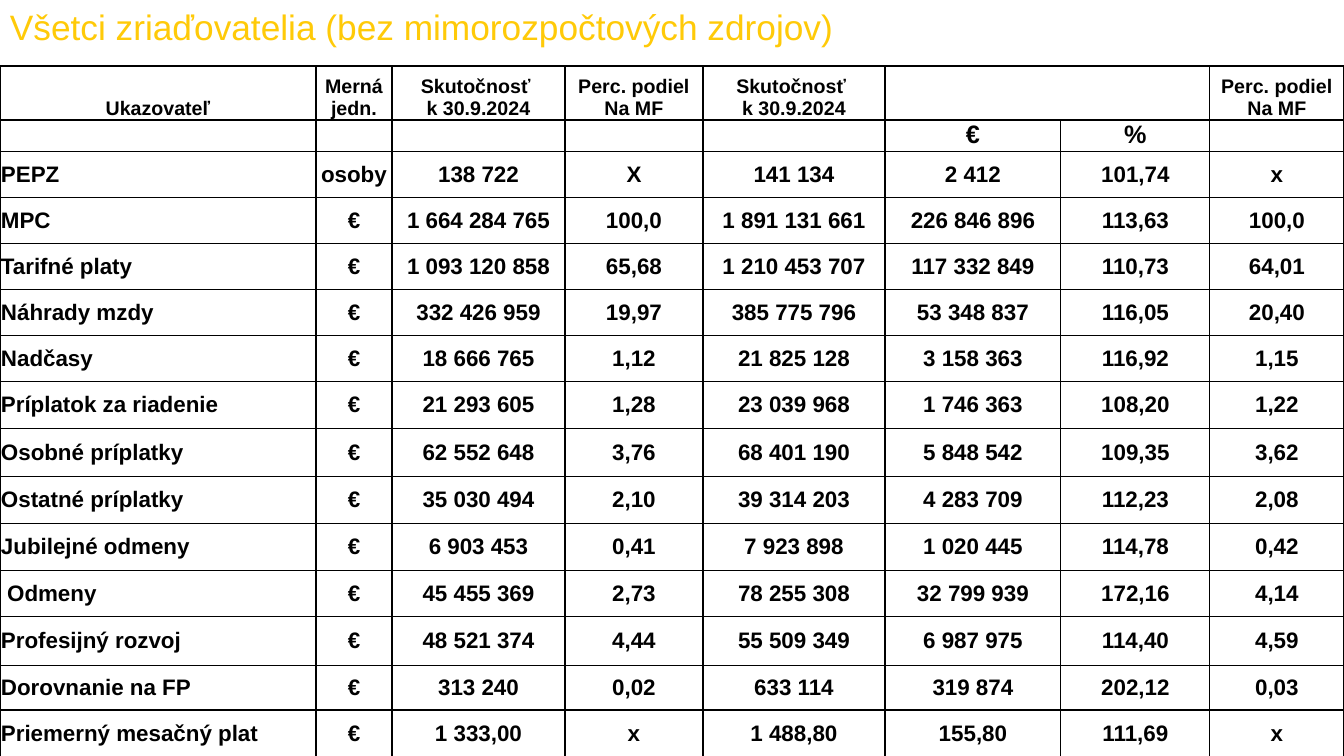
from lxml import etree
from pptx import Presentation
from pptx import util as u
from pptx.dml import color
from pptx.enum import text
from pptx.oxml import ns

PX = 9071.43
CENTER, LEFT = text.PP_ALIGN.CENTER, text.PP_ALIGN.LEFT
TOP, MIDDLE, BOTTOM = (text.MSO_ANCHOR.TOP, text.MSO_ANCHOR.MIDDLE,
                       text.MSO_ANCHOR.BOTTOM)

COLS = [316, 76, 173, 138, 182, 176, 149, 134]
ROWS = [54, 30, 46, 46, 46, 46, 46, 47, 48, 47, 47, 46, 49, 45, 47]
ACTUAL = "Skutočnosť \nk 30.9.2024"
SHARE = "Perc. podiel\nNa MF"
HEADER = ["Ukazovateľ", "Merná jedn.", ACTUAL, SHARE, ACTUAL, "", "", SHARE]
SUBHEADER = ["", "", "", "", "", "€", "%", ""]
DATA = [
    ["PEPZ", "osoby", "138 722", "X", "141 134", "2 412", "101,74", "x"],
    ["MPC", "€", "1 664 284 765", "100,0", "1 891 131 661", "226 846 896", "113,63", "100,0"],
    ["Tarifné platy", "€", "1 093 120 858", "65,68", "1 210 453 707", "117 332 849", "110,73", "64,01"],
    ["Náhrady mzdy", "€", "332 426 959", "19,97", "385 775 796", "53 348 837", "116,05", "20,40"],
    ["Nadčasy", "€", "18 666 765", "1,12", "21 825 128", "3 158 363", "116,92", "1,15"],
    ["Príplatok za riadenie", "€", "21 293 605", "1,28", "23 039 968", "1 746 363", "108,20", "1,22"],
    ["Osobné príplatky", "€", "62 552 648", "3,76", "68 401 190", "5 848 542", "109,35", "3,62"],
    ["Ostatné príplatky", "€", "35 030 494", "2,10", "39 314 203", "4 283 709", "112,23", "2,08"],
    ["Jubilejné odmeny", "€", "6 903 453", "0,41", "7 923 898", "1 020 445", "114,78", "0,42"],
    [" Odmeny", "€", "45 455 369", "2,73", "78 255 308", "32 799 939", "172,16", "4,14"],
    ["Profesijný rozvoj", "€", "48 521 374", "4,44", "55 509 349", "6 987 975", "114,40", "4,59"],
    ["Dorovnanie na FP", "€", "313 240", "0,02", "633 114", "319 874", "202,12", "0,03"],
    ["Priemerný mesačný plat", "€", "1 333,00", "x", "1 488,80", "155,80", "111,69", "x"],
]


def px(n):
    return u.Emu(round(n * PX))


def rgb(value):
    return color.RGBColor.from_string(value)


class Deck:
    font = "Arial"
    ink = "000000"
    paper = "FFFFFF"
    accent = "FFCA08"

    def __init__(self, width, height):
        self.prs = Presentation()
        self.prs.slide_width, self.prs.slide_height = px(width), px(height)
        self.s = self.prs.slides.add_slide(self.prs.slide_layouts[6])

    def add_text(self, tf, content, size, ink, bold=False, align=LEFT):
        tf.word_wrap = True
        for i, line in enumerate(content.split("\n")):
            p = tf.add_paragraph() if i else tf.paragraphs[0]
            p.alignment = align
            r = p.add_run()
            r.text = line
            r.font.name, r.font.size, r.font.bold = self.font, u.Pt(size), bold
            r.font.color.rgb = rgb(ink)

    def title(self, x, y, w, h, content, size):
        tf = self.s.shapes.add_textbox(px(x), px(y), px(w), px(h)).text_frame
        tf.vertical_anchor = MIDDLE
        self.add_text(tf, content, size, self.accent)

    def borders(self, cell):
        tc_pr = cell._tc.get_or_add_tcPr()
        for side in ("lnL", "lnR", "lnT", "lnB"):
            ln = etree.SubElement(tc_pr, ns.qn("a:" + side), w=str(u.Pt(1)))
            fill = etree.SubElement(ln, ns.qn("a:solidFill"))
            etree.SubElement(fill, ns.qn("a:srgbClr"), val=self.ink)

    def cell(self, cell, content, size, anchor, align):
        self.borders(cell)
        cell.fill.solid()
        cell.fill.fore_color.rgb = rgb(self.paper)
        cell.margin_left = cell.margin_right = cell.margin_top = px(1)
        cell.margin_bottom = 0
        cell.vertical_anchor = anchor
        if content:
            self.add_text(cell.text_frame, content, size, self.ink, True, align)

    def table(self, x, y, cols, rows, bands):
        tbl = self.s.shapes.add_table(len(rows), len(cols), px(x), px(y),
                                      px(sum(cols)), px(sum(rows))).table
        tbl.first_row = tbl.horz_banding = False
        for col, w in zip(tbl.columns, cols):
            col.width = px(w)
        for row, h in zip(tbl.rows, rows):
            row.height = px(h)
        lines = [(line, size, anchor, first)
                 for group, size, anchor, first in bands for line in group]
        for row, (line, size, anchor, first) in zip(tbl.rows, lines):
            for c, content in enumerate(line):
                align = CENTER if c else first
                self.cell(row.cells[c], content, size, anchor, align)
        return tbl


def main():
    deck = Deck(1344, 756)
    deck.title(0, 0, 948, 52,
               "Všetci zriaďovatelia (bez mimorozpočtových zdrojov)", 25.2)
    tbl = deck.table(0, 66, COLS, ROWS, [
        ([HEADER], 14, BOTTOM, CENTER),
        ([SUBHEADER], 18, TOP, CENTER),
        (DATA, 16, MIDDLE, LEFT),
    ])
    tbl.cell(0, 5).merge(tbl.cell(0, 6))
    deck.prs.save("out.pptx")


if __name__ == "__main__":
    main()
